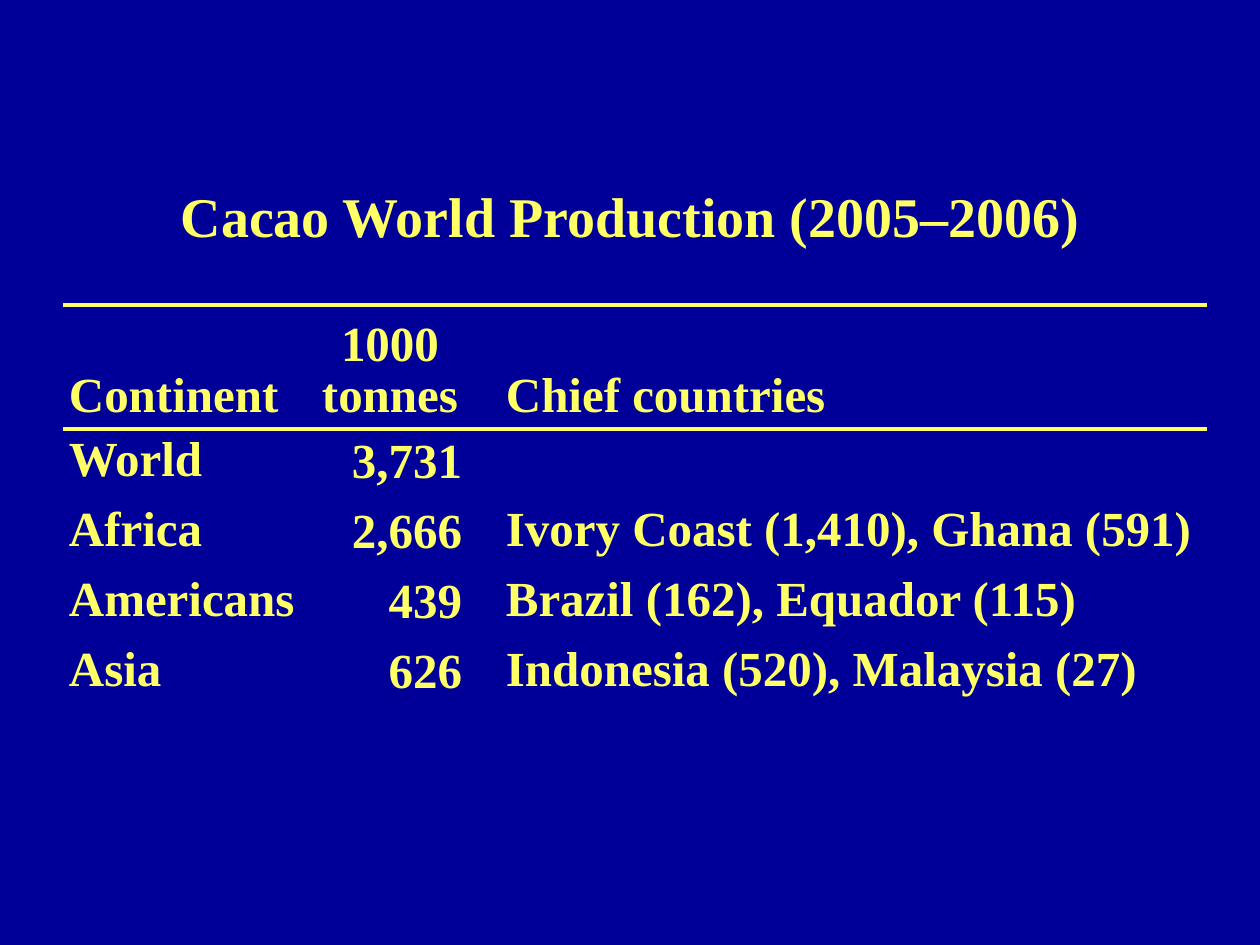
from lxml import etree
from pptx import Presentation
from pptx import util as u
from pptx.dml.color import RGBColor
from pptx.enum import text
from pptx.oxml.ns import qn

NAVY = RGBColor(0x00, 0x00, 0x99)
YELLOW = RGBColor(0xFF, 0xFF, 0x66)
PX = u.Inches(1) / 126
LEFT, CENTER, RIGHT = text.PP_ALIGN.LEFT, text.PP_ALIGN.CENTER, text.PP_ALIGN.RIGHT
TOP, MIDDLE, BOTTOM = text.MSO_ANCHOR.TOP, text.MSO_ANCHOR.MIDDLE, text.MSO_ANCHOR.BOTTOM


def px(n):
    return u.Emu(round(n * PX))


class Deck:
    """Style and current slide, with one method per kind of element."""
    font, color, rule = "Times New Roman", YELLOW, u.Pt(2.25)

    def __init__(self, width, height):
        self.prs = Presentation()
        self.prs.slide_width, self.prs.slide_height = px(width), px(height)
        self.s = self.prs.slides.add_slide(self.prs.slide_layouts[5])
        fill = self.s.background.fill
        fill.solid()
        fill.fore_color.rgb = NAVY

    def set_text(self, p, words, size, align):
        p.text, p.alignment = words, align
        f = p.font
        f.name, f.size, f.bold = self.font, u.Pt(size), True
        f.color.rgb = self.color

    def title(self, words, x, y, w, h):
        sp = self.s.shapes.title
        sp.left, sp.top, sp.width, sp.height = map(px, (x, y, w, h))
        sp.text_frame.vertical_anchor = MIDDLE
        self.set_text(sp.text_frame.paragraphs[0], words, 32, CENTER)

    def borders(self, cell, ruled):
        """Draw the sides named in ruled and clear the others."""
        tc_pr = cell._tc.get_or_add_tcPr()
        for i, side in enumerate("LRTB"):
            ln = etree.Element(qn(f"a:ln{side}"), w=str(self.rule))
            if side in ruled:
                fill = etree.SubElement(ln, qn("a:solidFill"))
                etree.SubElement(fill, qn("a:srgbClr"), val=str(self.color))
            else:
                etree.SubElement(ln, qn("a:noFill"))
            tc_pr.insert(i, ln)

    def table(self, rows, x, y, widths, heights, aligns, insets):
        frame = self.s.shapes.add_table(len(rows), len(widths), px(x), px(y),
                                        px(sum(widths)), px(sum(heights)))
        tbl = frame.table
        tbl.first_row = tbl.horz_banding = False
        for col, w in zip(tbl.columns, widths):
            col.width = px(w)
        for row, h in zip(tbl.rows, heights):
            row.height = px(h)
        for i, row in enumerate(rows):
            for j, words in enumerate(row):
                cell = tbl.cell(i, j)
                cell.fill.background()
                cell.margin_left = px(insets[j])
                cell.margin_right = cell.margin_top = cell.margin_bottom = px(6)
                cell.vertical_anchor = TOP if i else BOTTOM
                self.borders(cell, {0: "TB", 1: "T"}.get(i, ""))
                p = cell.text_frame.paragraphs[0]
                align = CENTER if i == 0 and j == 1 else aligns[j]
                self.set_text(p, words, 28, align)
                # Figures keep full line spacing
                if i == 0 or j != 1:
                    p.line_spacing = 0.95


def main():
    deck = Deck(1260, 945)

    # Heading
    deck.title("Cacao World Production (2005–2006)", 95, 136, 1071, 158)

    # Production by continent
    rows = [
        ("Continent", "1000\vtonnes", "Chief countries"),
        ("World", "3,731", ""),
        ("Africa", "2,666", "Ivory Coast (1,410), Ghana (591)"),
        ("Americans", "439", "Brazil (162), Equador (115)"),
        ("Asia", "626", "Indonesia (520), Malaysia (27)"),
    ]
    deck.table(rows, 63, 305, widths=(249, 156, 739),
               heights=(124,) + (70,) * 4,
               aligns=(LEFT, RIGHT, LEFT), insets=(6, 6, 38))

    deck.prs.save("out.pptx")


if __name__ == "__main__":
    main()
